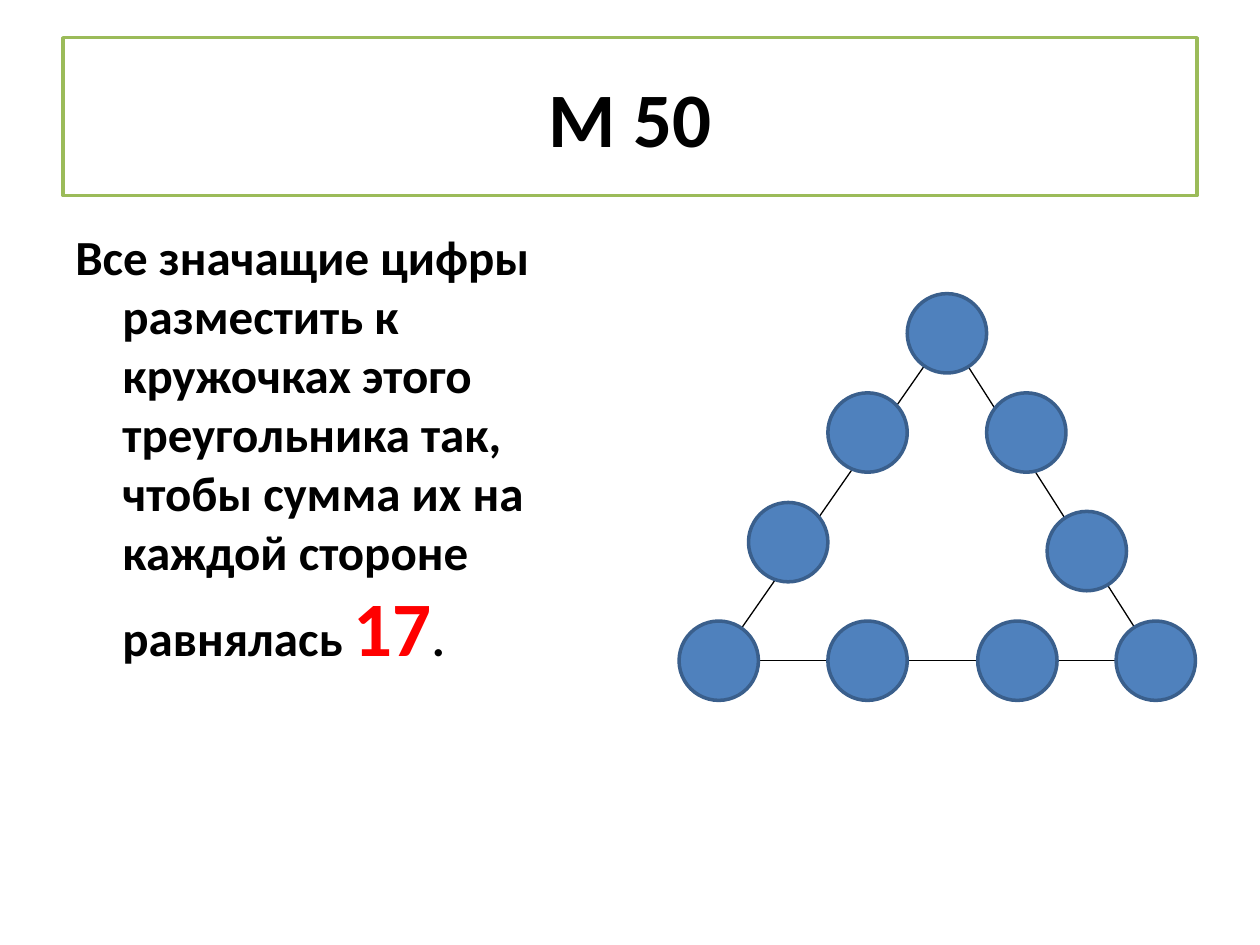
from pptx import Presentation
from pptx.dml.color import RGBColor
from pptx.enum import shapes, text
from pptx.oxml import ns
from pptx.util import Cm, Pt
from lxml import etree

COLORS = {
    "black": "000000",
    "white": "FFFFFF",
    "red": "FF0000",
    "green": "9BBB59",
    "blue": "4F81BD",
    "dark_blue": "3A5F8C",
}
FONT = "Calibri"
DIAMETER = 1.6
APEX, RIGHT, LEFT = (19.09, 6.72), (23.3, 13.32), (14.49, 13.32)
SIDE_CENTERS = [
    (20.69, 8.72), (21.91, 11.11),
    (17.49, 8.72), (15.89, 10.93),
    (17.49, 13.32), (20.51, 13.32),
]


def color(name):
    return RGBColor.from_string(COLORS[name])


def paint(shape, fill, line):
    shape.fill.solid()
    shape.fill.fore_color.rgb = color(fill)
    shape.line.color.rgb = color(line)
    shape.line.width = Pt(2)


def add_run(paragraph, content, size, name="black"):
    run = paragraph.add_run()
    run.text = content
    run.font.name = FONT
    run.font.size = Pt(size)
    run.font.bold = True
    run.font.color.rgb = color(name)


def format_title(slide):
    title = slide.shapes.title
    title.left, title.top, title.width, title.height = (
        Cm(1.27), Cm(0.76), Cm(22.86), Cm(3.18))
    paint(title, "white", "green")
    frame = title.text_frame
    frame.auto_size = text.MSO_AUTO_SIZE.NONE
    frame.vertical_anchor = text.MSO_ANCHOR.MIDDLE
    paragraph = frame.paragraphs[0]
    paragraph.alignment = text.PP_ALIGN.CENTER
    add_run(paragraph, "М 50", 44)


def add_task(slide):
    box = slide.shapes.add_textbox(Cm(1.27), Cm(4.45), Cm(11.23), Cm(12.57))
    frame = box.text_frame
    frame.word_wrap = True
    paragraph = frame.paragraphs[0]
    properties = paragraph._p.get_or_add_pPr()
    properties.set("marL", str(Cm(0.95)))
    properties.set("indent", str(-Cm(0.95)))
    add_run(paragraph, "Все значащие цифры разместить к кружочках этого "
            "треугольника так, чтобы сумма их на каждой стороне равнялась ", 28)
    add_run(paragraph, "17", 44, "red")
    add_run(paragraph, ".", 28)


def add_side(slide, start, end):
    side = slide.shapes.add_connector(
        shapes.MSO_CONNECTOR.STRAIGHT, *map(Cm, start + end))
    side.line.color.rgb = color("black")
    side.line.width = Pt(0.75)
    etree.SubElement(side._element.spPr, ns.qn("a:effectLst"))


def add_circle(slide, center):
    x, y = center
    circle = slide.shapes.add_shape(
        shapes.MSO_SHAPE.FLOWCHART_CONNECTOR,
        Cm(x - DIAMETER / 2), Cm(y - DIAMETER / 2), Cm(DIAMETER), Cm(DIAMETER))
    circle.shadow.inherit = False
    paint(circle, "blue", "dark_blue")


def main():
    presentation = Presentation()
    presentation.slide_width, presentation.slide_height = Cm(25.4), Cm(19.05)
    slide = presentation.slides.add_slide(presentation.slide_layouts[5])
    format_title(slide)
    add_task(slide)
    corners = [APEX, RIGHT, LEFT]
    for start, end in zip(corners, corners[1:] + corners[:1]):
        add_side(slide, start, end)
    for center in corners + SIDE_CENTERS:
        add_circle(slide, center)
    presentation.save("out.pptx")


if __name__ == "__main__":
    main()
